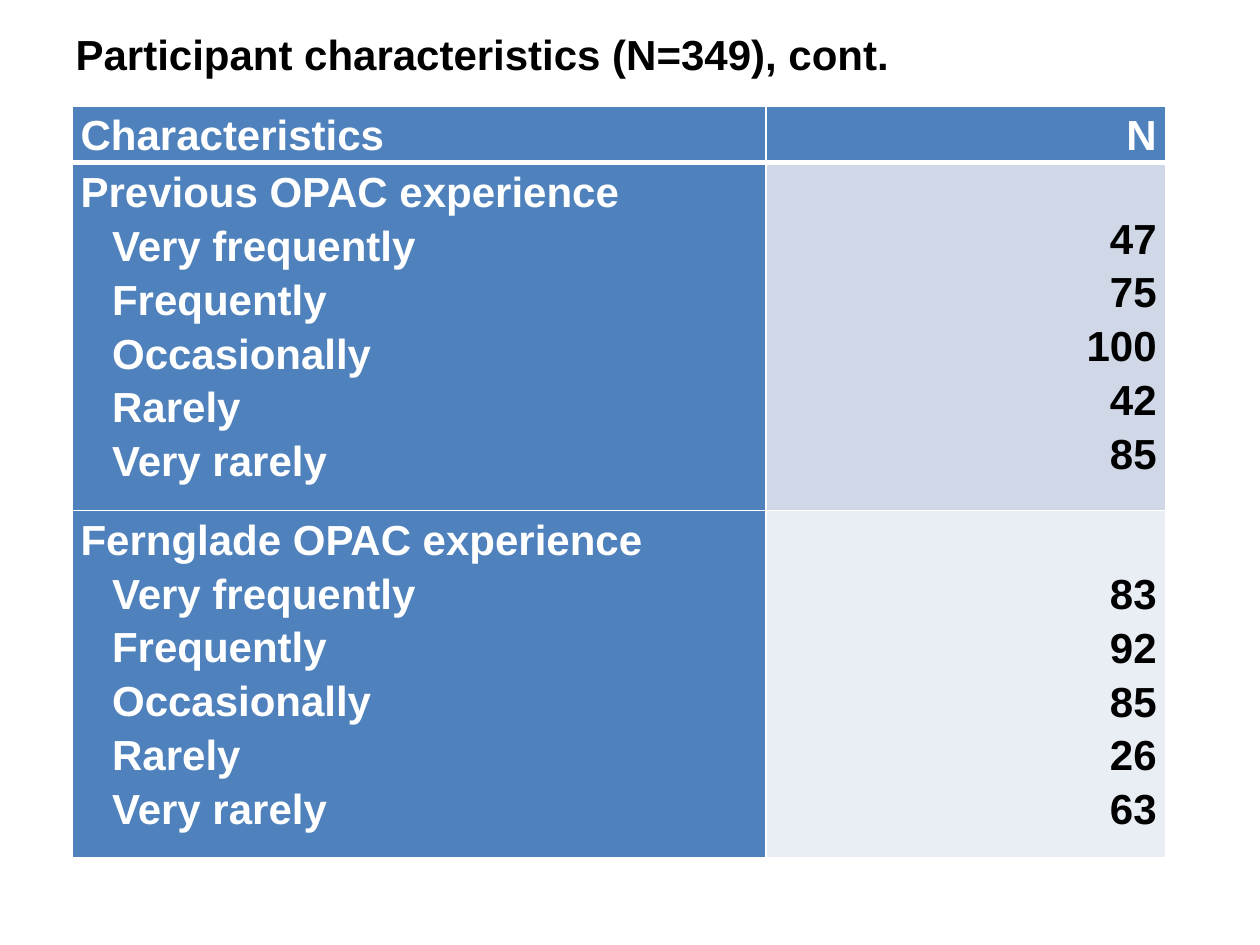
"""Build the participant characteristics slide with its two-column table."""
from dataclasses import dataclass

from lxml.etree import SubElement
from pptx import Presentation
from pptx.dml.color import RGBColor
from pptx.enum.text import MSO_ANCHOR, MSO_AUTO_SIZE, PP_ALIGN
from pptx.oxml.ns import qn
from pptx.util import Inches, Pt

SLIDE_WIDTH, SLIDE_HEIGHT = Inches(10), Inches(7.5)
COLORS = {"ink": "000000", "paper": "FFFFFF", "label": "4F81BD",
          "band": "D0D8E8", "light band": "E9EDF4"}
FONT = {"name": "Arial", "size": Pt(24), "bold": True}
TITLE_FRAME = {"word_wrap": True, "auto_size": MSO_AUTO_SIZE.NONE,
               "vertical_anchor": MSO_ANCHOR.MIDDLE}
CELL_FORMAT = {"margin_left": Inches(0.07), "margin_right": Inches(0.07),
               "margin_bottom": 0, "vertical_anchor": MSO_ANCHOR.TOP}
FREQUENCIES = ["Very frequently", "Frequently", "Occasionally", "Rarely", "Very rarely"]
COLUMN_SHARES = (0.551, 0.317)
THIN, THICK = Pt(1), Pt(3)


@dataclass(frozen=True)
class Section:
    """One table row: a heading, its answers and their counts."""
    heading: str
    answers: list[str]
    counts: list[str]
    count_fill: str
    count_color: str
    height_share: float
    count_drop: float
    top_line: int = THIN
    bottom_line: int = THIN


SECTIONS = [
    Section("Characteristics", [], ["N"], "label", "paper", 0.06, 0, bottom_line=THICK),
    Section("Previous OPAC experience", FREQUENCIES, ["47", "75", "100", "42", "85"],
            "band", "ink", 0.368, 0.37, top_line=THICK),
    Section("Fernglade OPAC experience", FREQUENCIES, ["83", "92", "85", "26", "63"],
            "light band", "ink", 0.368, 0.43),
]


def apply_format(target, values: dict) -> None:
    """Set each attribute named in values on the target."""
    for attribute, value in values.items():
        setattr(target, attribute, value)


def rgb(color: str) -> RGBColor:
    """Return the colour stored under a name."""
    return RGBColor.from_string(COLORS[color])


def write_lines(frame, lines: list[str], color: str, align=PP_ALIGN.LEFT,
                spacing: float = 1.0, indent: float = 0) -> None:
    """Write one paragraph per line, indenting all but the first."""
    for index, line in enumerate(lines):
        paragraph = frame.add_paragraph() if index else frame.paragraphs[0]
        apply_format(paragraph, {"alignment": align, "line_spacing": spacing})
        if index and indent:
            paragraph._p.get_or_add_pPr().set("marL", str(Inches(indent)))
        run = paragraph.add_run()
        run.text = line
        apply_format(run.font, FONT)
        run.font.color.rgb = rgb(color)


def draw_borders(cell, section: Section) -> None:
    """Give the cell its four white borders."""
    properties = cell._tc.get_or_add_tcPr()
    widths = {"lnL": THIN, "lnR": THIN, "lnT": section.top_line, "lnB": section.bottom_line}
    for side, width in widths.items():
        border = SubElement(properties, qn(f"a:{side}"), w=str(width))
        SubElement(SubElement(border, qn("a:solidFill")), qn("a:srgbClr"), val=COLORS["paper"])


def style_cell(cell, section: Section, fill: str, drop: float = 0) -> None:
    """Set the borders, fill and margins of a cell."""
    draw_borders(cell, section)
    cell.fill.solid()
    cell.fill.fore_color.rgb = rgb(fill)
    apply_format(cell, CELL_FORMAT | {"margin_top": Inches(drop)})


def draw_title(slide, text: str) -> None:
    """Place and fill the title placeholder."""
    title = slide.shapes.title
    apply_format(title, {"left": int(SLIDE_WIDTH * 0.05), "top": int(SLIDE_HEIGHT * 0.023),
                         "width": int(SLIDE_WIDTH * 0.69), "height": int(SLIDE_HEIGHT * 0.067)})
    apply_format(title.text_frame, TITLE_FRAME)
    write_lines(title.text_frame, [text], "ink")


def draw_table(slide, sections: list[Section]) -> None:
    """Draw the table, one row per section."""
    table = slide.shapes.add_table(
        len(sections), len(COLUMN_SHARES), int(SLIDE_WIDTH * 0.057), int(SLIDE_HEIGHT * 0.112),
        int(SLIDE_WIDTH * sum(COLUMN_SHARES)),
        int(SLIDE_HEIGHT * sum(section.height_share for section in sections))).table
    for column, share in zip(table.columns, COLUMN_SHARES):
        column.width = int(SLIDE_WIDTH * share)
    for row, section in zip(table.rows, sections):
        row.height = int(SLIDE_HEIGHT * section.height_share)
        labels, counts = row.cells
        style_cell(labels, section, "label")
        write_lines(labels.text_frame, [section.heading, *section.answers], "paper",
                    spacing=1.15, indent=0.25)
        style_cell(counts, section, section.count_fill, section.count_drop)
        write_lines(counts.text_frame, section.counts, section.count_color,
                    PP_ALIGN.RIGHT, spacing=1.15)


def main() -> None:
    """Build and save the slide."""
    presentation = Presentation()
    apply_format(presentation, {"slide_width": SLIDE_WIDTH, "slide_height": SLIDE_HEIGHT})
    slide = presentation.slides.add_slide(presentation.slide_layouts.get_by_name("Title Only"))
    draw_title(slide, "Participant characteristics (N=349), cont.")
    draw_table(slide, SECTIONS)
    presentation.save("out.pptx")


if __name__ == "__main__":
    main()
